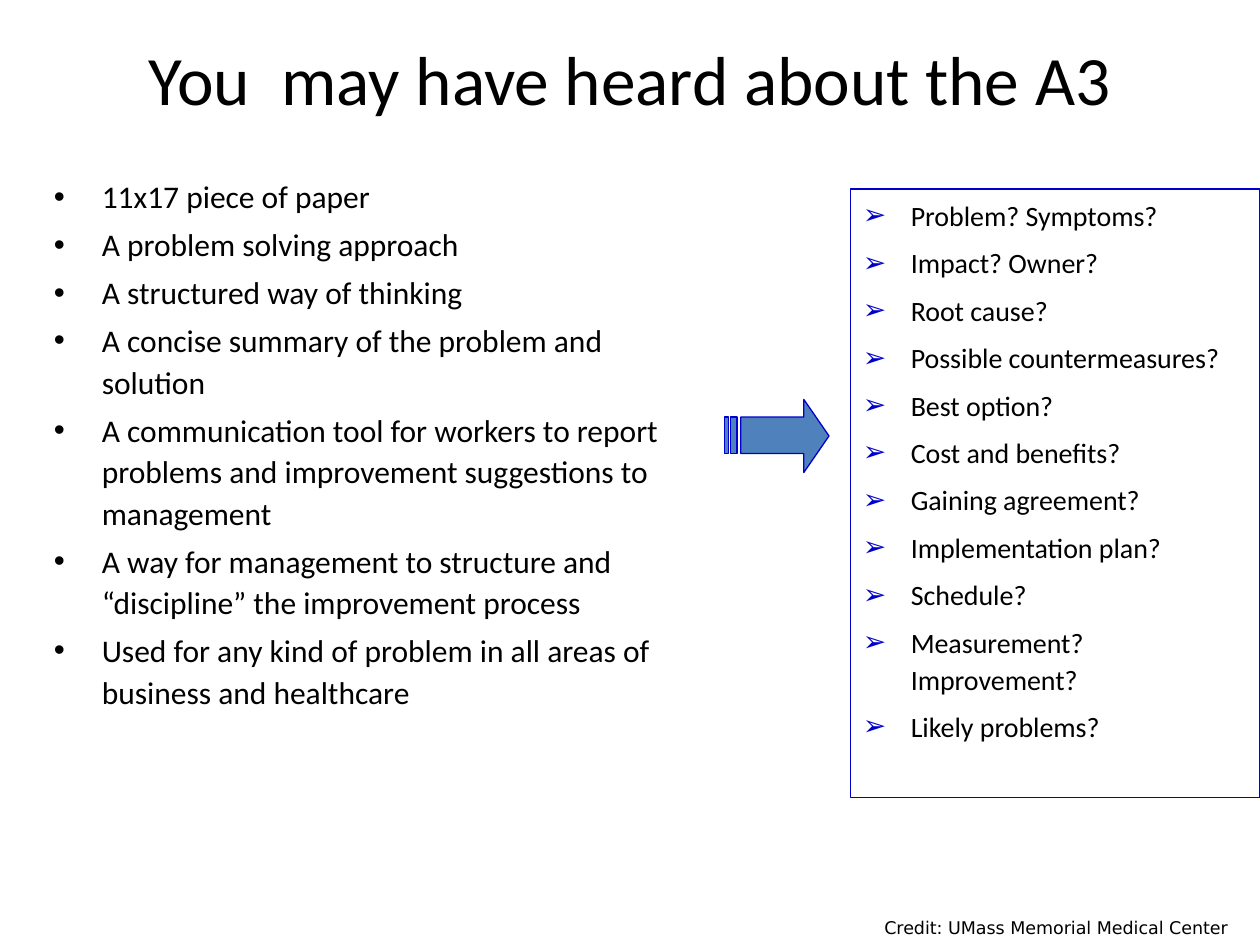
from dataclasses import dataclass

from lxml import etree
from pptx import Presentation
from pptx.dml.color import RGBColor
from pptx.enum import shapes, text
from pptx.oxml import ns
from pptx.util import Inches, Pt

BLACK = RGBColor(0x00, 0x00, 0x00)
OUTLINE_BLUE = RGBColor(0x00, 0x00, 0xCC)
ARROW_BLUE = RGBColor(0x4F, 0x81, 0xBD)
BODY_FONT = "Calibri"
INDENT = Inches(0.38)


@dataclass(frozen=True)
class Area:
    left: float
    top: float
    width: float
    height: float

    def lengths(self) -> list:
        return [Inches(v) for v in (self.left, self.top, self.width, self.height)]


@dataclass(frozen=True)
class BulletList:
    area: Area
    bullet: str
    bullet_color: RGBColor
    size: float
    space_before: float
    items: tuple[str, ...]


DESCRIPTION = BulletList(
    Area(0.33, 1.33, 5.34, 5), "•", BLACK, 18, 3.6,
    (
        "11x17 piece of paper",
        "A problem solving approach",
        "A structured way of thinking",
        "A concise summary of the problem and solution",
        "A communication tool for workers to report problems and "
        "improvement suggestions to management",
        "A way for management to structure and “discipline” the improvement process",
        "Used for any kind of problem in all areas of business and healthcare",
    ),
)
QUESTIONS = BulletList(
    Area(6.75, 1.5, 3.25, 4.83), "➢", OUTLINE_BLUE, 16, 6,
    (
        "Problem? Symptoms?",
        "Impact? Owner?",
        "Root cause?",
        "Possible countermeasures?",
        "Best option?",
        "Cost and benefits?",
        "Gaining agreement?",
        "Implementation plan?",
        "Schedule?",
        "Measurement? Improvement?",
        "Likely problems?",
    ),
)

SHAFT_TOP, SHAFT_BOTTOM = 3.31, 3.6


def stripe(left: float, right: float) -> list[tuple[float, float]]:
    return [(left, SHAFT_TOP), (left, SHAFT_BOTTOM),
            (right, SHAFT_BOTTOM), (right, SHAFT_TOP)]


ARROW_CONTOURS = [
    [(6.38, 3.17), (6.38, SHAFT_TOP), (5.88, SHAFT_TOP), (5.88, SHAFT_BOTTOM),
     (6.38, SHAFT_BOTTOM), (6.38, 3.75), (6.58, 3.46)],
    stripe(5.8, 5.85),
    stripe(5.75, 5.78),
]


def apply_format(target, values: dict) -> None:
    for name, value in values.items():
        setattr(target, name, value)


def style_font(font, name: str, size: float) -> None:
    apply_format(font, {"name": name, "size": Pt(size)})
    font.color.rgb = BLACK


def outline(shape) -> None:
    shape.line.color.rgb = OUTLINE_BLUE
    shape.line.width = Pt(0.75)


def add_line_of_text(slide, area: Area, words: str, font: str, size: float,
                     align, anchor) -> None:
    frame = slide.shapes.add_textbox(*area.lengths()).text_frame
    apply_format(frame, {"word_wrap": True, "vertical_anchor": anchor})
    paragraph = frame.paragraphs[0]
    paragraph.alignment = align
    run = paragraph.add_run()
    run.text = words
    style_font(run.font, font, size)


def add_bullet(paragraph, character: str, color: RGBColor) -> None:
    properties = paragraph._p.get_or_add_pPr()
    properties.set("marL", str(INDENT))
    properties.set("indent", str(-INDENT))
    bullet_color = etree.SubElement(properties, ns.qn("a:buClr"))
    etree.SubElement(bullet_color, ns.qn("a:srgbClr"), val=str(color))
    etree.SubElement(properties, ns.qn("a:buFont"), typeface="Arial")
    etree.SubElement(properties, ns.qn("a:buChar"), char=character)


def add_bullet_list(slide, content: BulletList):
    box = slide.shapes.add_textbox(*content.area.lengths())
    frame = box.text_frame
    frame.word_wrap = True
    for index, item in enumerate(content.items):
        paragraph = frame.add_paragraph() if index else frame.paragraphs[0]
        add_bullet(paragraph, content.bullet, content.bullet_color)
        apply_format(paragraph, {
            "line_spacing": 1.1,
            "space_before": Pt(content.space_before if index else 0),
        })
        run = paragraph.add_run()
        run.text = item
        style_font(run.font, BODY_FONT, content.size)
    return box


def add_striped_arrow(slide) -> None:
    """Draw the head with its shaft and the two tail stripes as one shape."""
    contours = [[(Inches(x), Inches(y)) for x, y in points]
                for points in ARROW_CONTOURS]
    builder = slide.shapes.build_freeform(*contours[0][0])
    for index, (start, *rest) in enumerate(contours):
        if index:
            builder.move_to(*start)
        builder.add_line_segments(rest, close=True)
    arrow = builder.convert_to_shape()
    arrow.shadow.inherit = False
    arrow.fill.solid()
    arrow.fill.fore_color.rgb = ARROW_BLUE
    outline(arrow)


def main() -> None:
    deck = Presentation()
    apply_format(deck, {"slide_width": Inches(10), "slide_height": Inches(7.5)})
    slide = deck.slides.add_slide(deck.slide_layouts[6])

    add_line_of_text(slide, Area(0, 0.33, 10, 0.58), "You  may have heard about the A3",
                     BODY_FONT, 39.6, text.PP_ALIGN.CENTER, text.MSO_ANCHOR.MIDDLE)
    add_bullet_list(slide, DESCRIPTION)
    outline(add_bullet_list(slide, QUESTIONS))
    add_striped_arrow(slide)
    add_line_of_text(slide, Area(6.92, 7.23, 3.08, 0.27),
                     "Credit: UMass Memorial Medical Center",
                     "DejaVu Sans", 10, text.PP_ALIGN.LEFT, text.MSO_ANCHOR.TOP)
    deck.save("out.pptx")


if __name__ == "__main__":
    main()
